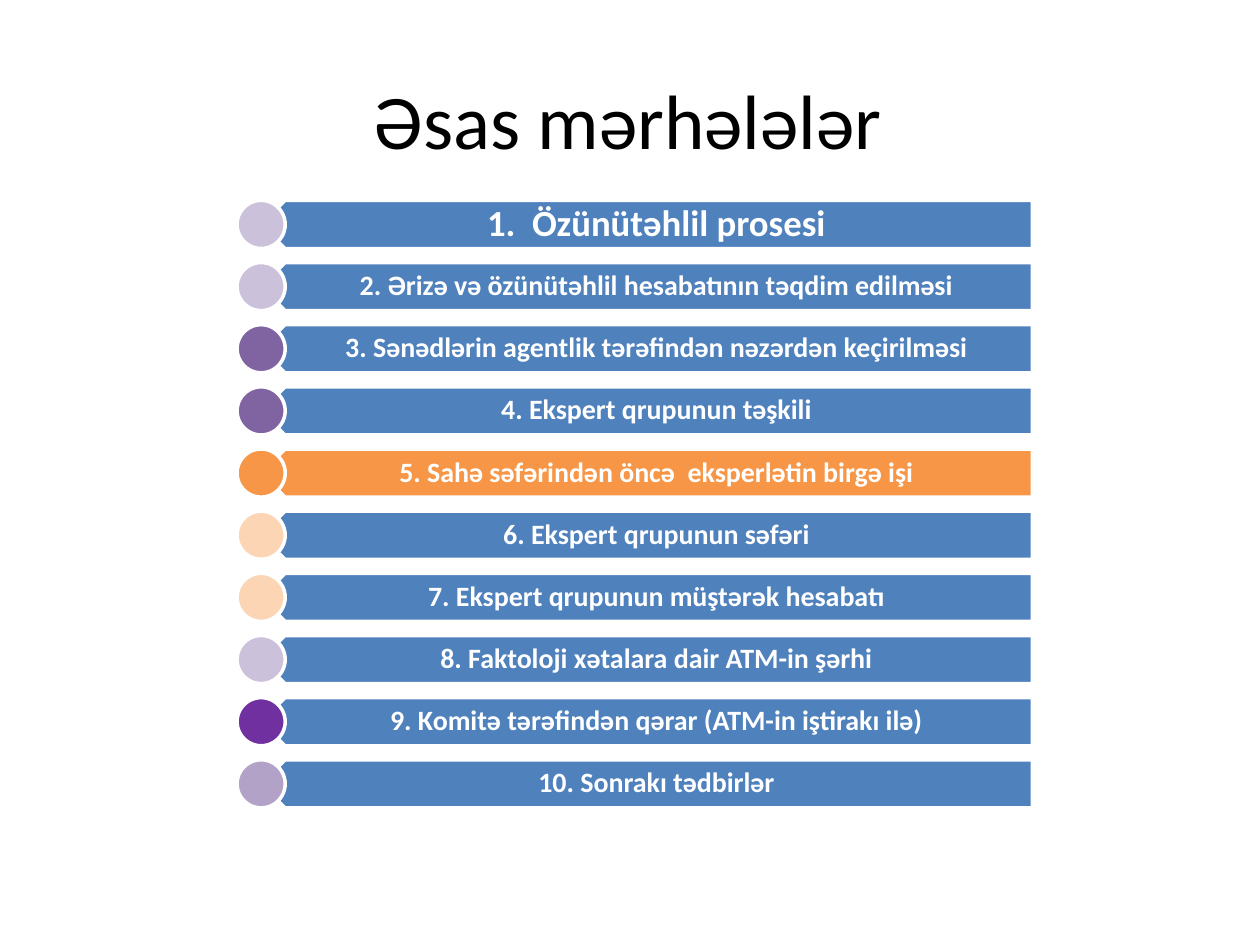
"""Build a slide that lists the ten main stages of an accreditation process."""
import pptx
import pptx.dml.color
import pptx.enum.shapes
import pptx.enum.text
import pptx.util

Cm = pptx.util.Cm
SHAPES = pptx.enum.shapes.MSO_SHAPE
COLOURS = {
    "black": "000000",
    "white": "FFFFFF",
    "blue": "4F81BD",
    "orange": "F79646",
    "peach": "FCD5B5",
    "lilac": "CCC1DA",
    "mauve": "B3A2C7",
    "purple": "8064A2",
    "violet": "7030A0",
}
STAGES = [
    ("1.  Özünütəhlil prosesi", 21, "blue", "lilac"),
    ("2. Ərizə və özünütəhlil hesabatının təqdim edilməsi", 16, "blue", "lilac"),
    ("3. Sənədlərin agentlik tərəfindən nəzərdən keçirilməsi", 16, "blue", "purple"),
    ("4. Ekspert qrupunun təşkili", 16, "blue", "purple"),
    ("5. Sahə səfərindən öncə  eksperlətin birgə işi", 16, "orange", "orange"),
    ("6. Ekspert qrupunun səfəri", 16, "blue", "peach"),
    ("7. Ekspert qrupunun müştərək hesabatı", 16, "blue", "peach"),
    ("8. Faktoloji xətalara dair ATM-in şərhi", 16, "blue", "lilac"),
    ("9. Komitə tərəfindən qərar (ATM-in iştirakı ilə)", 16, "blue", "violet"),
    ("10. Sonrakı tədbirlər", 16, "blue", "mauve"),
]
FIRST_TOP, PITCH, HEIGHT = 4.04, 1.253, 0.97


def add_text(page, left, top, width, height, text, size, colour, bold=False):
    box = page.shapes.add_textbox(Cm(left), Cm(top), Cm(width), Cm(height))
    frame = box.text_frame
    frame.word_wrap = True
    frame.vertical_anchor = pptx.enum.text.MSO_ANCHOR.MIDDLE
    frame.margin_left, frame.margin_right = Cm(0.43), Cm(0.3)
    frame.margin_top = frame.margin_bottom = Cm(0.18)
    para = frame.paragraphs[0]
    para.alignment = pptx.enum.text.PP_ALIGN.CENTER
    span = para.add_run()
    span.text = text
    span.font.name = "Calibri"
    span.font.size = pptx.util.Pt(size)
    span.font.bold = bold
    span.font.color.rgb = pptx.dml.color.RGBColor.from_string(COLOURS[colour])
    return para


def add_outlined(page, kind, left, top, width, height, colour):
    shape = page.shapes.add_shape(kind, Cm(left), Cm(top), Cm(width), Cm(height))
    shape.shadow.inherit = False
    shape.fill.solid()
    shape.fill.fore_color.rgb = pptx.dml.color.RGBColor.from_string(COLOURS[colour])
    shape.line.color.rgb = pptx.dml.color.RGBColor.from_string(COLOURS["white"])
    shape.line.width = pptx.util.Pt(2)
    return shape


deck = pptx.Presentation()
deck.slide_width, deck.slide_height = Cm(25.4), Cm(19.05)
page = deck.slides.add_slide(deck.slide_layouts[6])

add_text(page, 1.65, 1.24, 21.9, 2.29, "Əsas mərhələlər", 44, "black")

for index, (text, size, bar_colour, dot_colour) in enumerate(STAGES):
    top = FIRST_TOP + index * PITCH
    bar = add_outlined(page, SHAPES.PENTAGON, 5.26, top, 15.55, HEIGHT, bar_colour)
    bar.rotation = 180
    label = add_text(page, 5.51, top, 15.32, HEIGHT, text, size, "white", bold=True)
    label.line_spacing = 0.9
    add_outlined(page, SHAPES.OVAL, 4.78, top, HEIGHT, HEIGHT, dot_colour)

deck.save("out.pptx")
